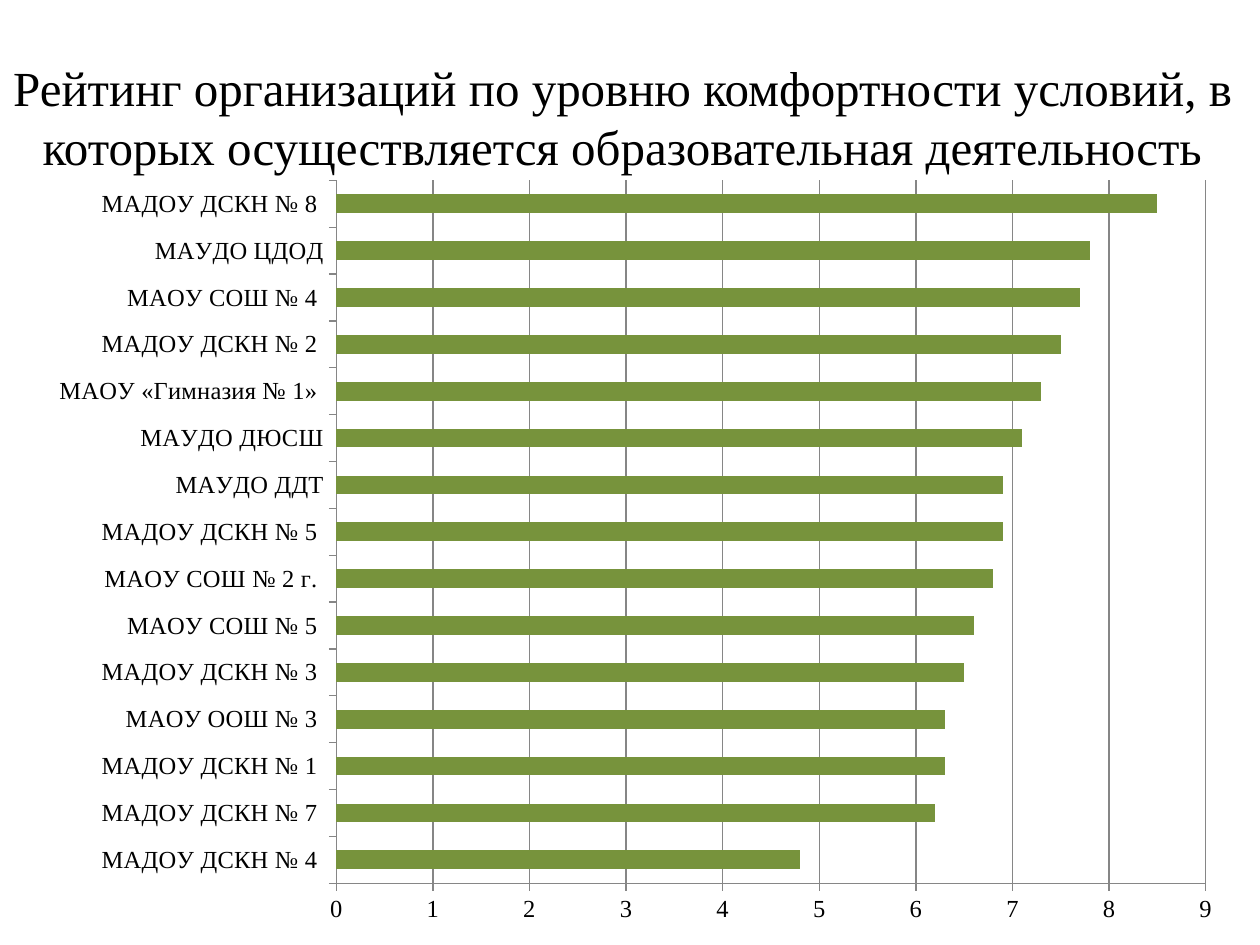
from dataclasses import dataclass

from lxml import etree
from pptx import Presentation
from pptx import util as u
from pptx.chart.data import CategoryChartData
from pptx.dml.color import RGBColor
from pptx.enum import chart as charts, text

COLUMNS, ROWS = 100, 75
TITLE = ("Рейтинг организаций по уровню комфортности условий, "
         "в которых осуществляется образовательная деятельность")
RATINGS = [
    ("МАДОУ ДСКН № 4 ", 4.8),
    ("МАДОУ ДСКН № 7 ", 6.2),
    ("МАДОУ ДСКН № 1 ", 6.3),
    ("МАОУ ООШ № 3 ", 6.3),
    ("МАДОУ ДСКН № 3 ", 6.5),
    ("МАОУ СОШ № 5 ", 6.6),
    ("МАОУ СОШ № 2 г. ", 6.8),
    ("МАДОУ ДСКН № 5 ", 6.9),
    ("МАУДО ДДТ", 6.9),
    ("МАУДО ДЮСШ", 7.1),
    ("МАОУ «Гимназия № 1» ", 7.3),
    ("МАДОУ ДСКН № 2 ", 7.5),
    ("МАОУ СОШ № 4 ", 7.7),
    ("МАУДО ЦДОД", 7.8),
    ("МАДОУ ДСКН № 8 ", 8.5),
]


@dataclass(frozen=True)
class Theme:
    font: str = "Times New Roman"
    ink: str = "000000"
    bar: str = "77933C"
    line: str = "868686"
    title_size: int = 28
    chart_size: int = 14


def apply(target, values):
    for name, value in values.items():
        setattr(target, name, value)


class SlideBuilder:
    def __init__(self, presentation, theme):
        self.theme = theme
        self.slide = presentation.slides.add_slide(presentation.slide_layouts[6])
        self.column = presentation.slide_width / COLUMNS
        self.row = presentation.slide_height / ROWS

    def box(self, left, top, width, height):
        """Turn grid columns and rows into slide lengths."""
        return (round(left * self.column), round(top * self.row),
                round(width * self.column), round(height * self.row))

    def style_font(self, font, size):
        apply(font, {"name": self.theme.font, "size": u.Pt(size), "bold": False})
        font.color.rgb = RGBColor.from_string(self.theme.ink)

    def style_line(self, line):
        line.color.rgb = RGBColor.from_string(self.theme.line)
        line.width = u.Pt(0.75)

    def title(self, words, *area):
        frame = self.slide.shapes.add_textbox(*self.box(*area)).text_frame
        apply(frame, {"word_wrap": True, "auto_size": text.MSO_AUTO_SIZE.NONE,
                      "vertical_anchor": text.MSO_ANCHOR.MIDDLE})
        paragraph = frame.paragraphs[0]
        paragraph.alignment = text.PP_ALIGN.CENTER
        run = paragraph.add_run()
        run.text = words
        self.style_font(run.font, self.theme.title_size)

    def bar_chart(self, ratings, *area):
        data = CategoryChartData()
        data.categories = [name for name, _ in ratings]
        data.add_series("Series 1", [value for _, value in ratings])
        chart = self.slide.shapes.add_chart(
            charts.XL_CHART_TYPE.BAR_CLUSTERED, *self.box(*area), data).chart
        apply(chart, {"has_legend": False, "has_title": False})
        self.style_font(chart.font, self.theme.chart_size)

        plot = chart.plots[0]
        apply(plot, {"gap_width": 150, "vary_by_categories": False})
        fill = plot.series[0].format.fill
        fill.solid()
        fill.fore_color.rgb = RGBColor.from_string(self.theme.bar)

        for axis in (chart.category_axis, chart.value_axis):
            apply(axis, {"major_tick_mark": charts.XL_TICK_MARK.OUTSIDE,
                         "minor_tick_mark": charts.XL_TICK_MARK.NONE})
            self.style_line(axis.format.line)
        apply(chart.value_axis, {"minimum_scale": 0, "maximum_scale": 9,
                                 "major_unit": 1, "has_major_gridlines": True})
        self.style_line(chart.value_axis.major_gridlines.format.line)


def main():
    presentation = Presentation()
    apply(presentation, {"slide_width": u.Inches(10), "slide_height": u.Inches(7.5)})
    builder = SlideBuilder(presentation, Theme())
    builder.title(TITLE, 0, 3, 98.8, 12.5)
    builder.bar_chart(RATINGS, 2.8, 13.1, 95.3, 61.4)
    presentation.save("out.pptx")


if __name__ == "__main__":
    main()
